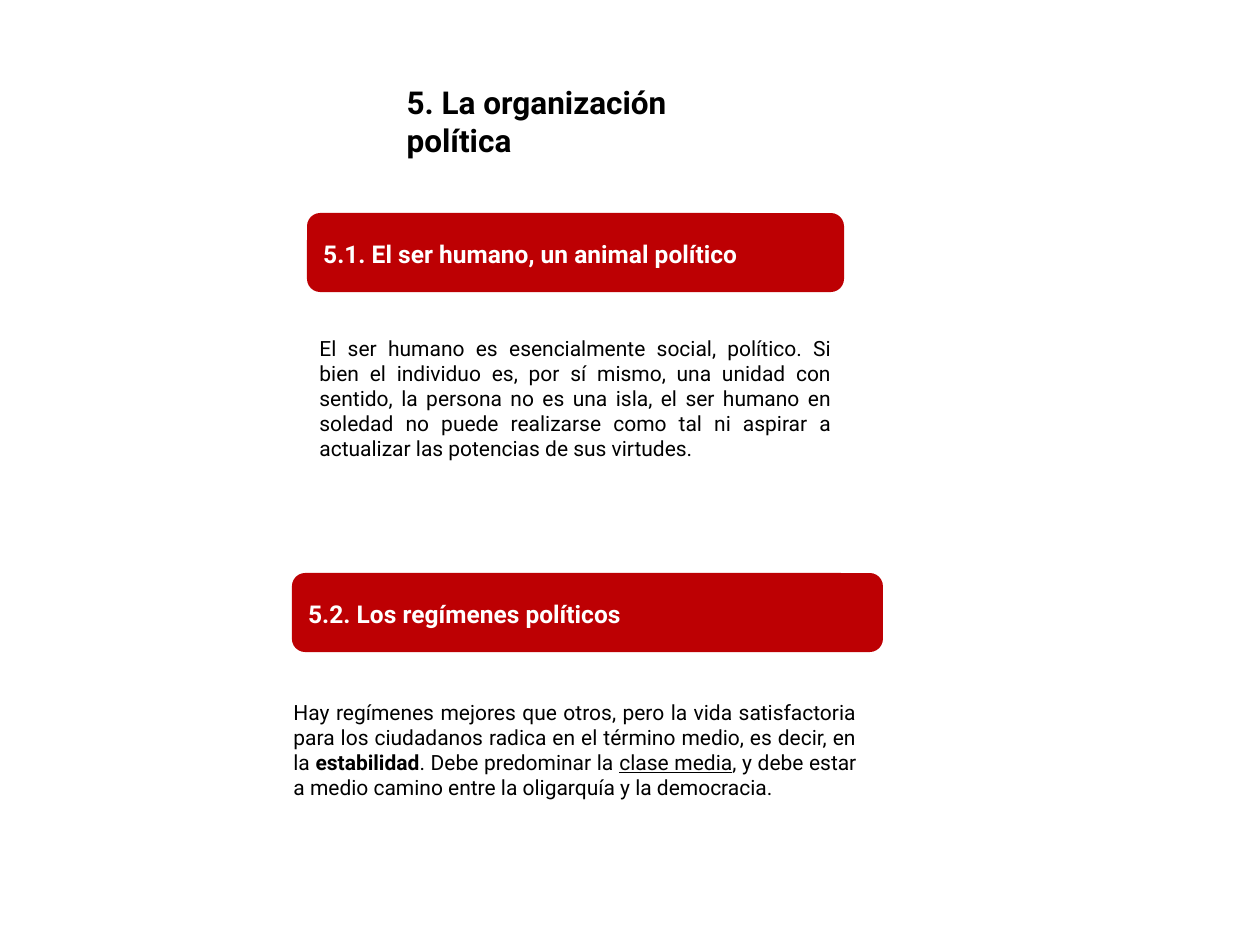
from dataclasses import dataclass

from pptx import Presentation
from pptx.dml.color import RGBColor
from pptx.enum.shapes import MSO_SHAPE
from pptx.enum.text import MSO_ANCHOR, MSO_AUTO_SIZE, PP_ALIGN
from pptx.util import Emu, Pt

ROUNDED = MSO_SHAPE.ROUNDED_RECTANGLE
TOP, MIDDLE = MSO_ANCHOR.TOP, MSO_ANCHOR.MIDDLE
LEFT, JUSTIFY = PP_ALIGN.LEFT, PP_ALIGN.JUSTIFY
NO_AUTOFIT = MSO_AUTO_SIZE.NONE

EMU_PER_PX = 914400 / 126
TITLE_ONLY_LAYOUT = 5


@dataclass(frozen=True)
class Theme:
    font: str = "Roboto"
    ink: RGBColor = RGBColor(0x00, 0x00, 0x00)
    banner: RGBColor = RGBColor(0xBD, 0x00, 0x03)
    banner_ink: RGBColor = RGBColor(0xFF, 0xFF, 0xFF)
    title_size: int = 18
    banner_size: int = 14
    body_size: int = 12


THEME = Theme()

# Each section: heading, its box, body runs (text, style), their box
SECTIONS = [
    (
        "5.1. El ser humano, un animal político",
        (307, 213, 537, 79),
        [("El ser humano es esencialmente social, político. Si bien el "
          "individuo es, por sí mismo, una unidad con sentido, la persona no "
          "es una isla, el ser humano en soledad no puede realizarse como tal "
          "ni aspirar a actualizar las potencias de sus virtudes.", "")],
        (307, 329, 537, 144),
    ),
    (
        "5.2. Los regímenes políticos",
        (292, 573, 591, 79),
        [("Hay regímenes mejores que otros, pero la vida satisfactoria para "
          "los ciudadanos radica en el término medio, es decir, en la ", ""),
         ("estabilidad", "bold"),
         (". Debe predominar la ", ""),
         ("clase media", "underline"),
         (", y debe estar a medio camino entre la oligarquía y la "
          "democracia.", "")],
        (281, 693, 588, 141),
    ),
]


def px(length):
    return Emu(round(length * EMU_PER_PX))


def format_run(run, size, color, bold=False, underline=False):
    font = run.font
    font.name, font.size = THEME.font, Pt(size)
    font.bold, font.underline = bold, underline
    font.color.rgb = color


def set_frame(frame, anchor):
    frame.word_wrap = True
    frame.auto_size = NO_AUTOFIT
    frame.vertical_anchor = anchor


def add_title(slide, text, box):
    title = slide.shapes.title
    title.left, title.top, title.width, title.height = map(px, box)
    title.text_frame.text = text
    set_frame(title.text_frame, TOP)
    paragraph = title.text_frame.paragraphs[0]
    paragraph.alignment = LEFT
    format_run(paragraph.runs[0], THEME.title_size, THEME.ink, bold=True)


def add_banner(slide, heading, box):
    banner = slide.shapes.add_shape(ROUNDED, *map(px, box))
    banner.shadow.inherit = False
    banner.fill.solid()
    banner.fill.fore_color.rgb = THEME.banner
    banner.line.fill.background()
    banner.text_frame.text = heading
    set_frame(banner.text_frame, MIDDLE)
    paragraph = banner.text_frame.paragraphs[0]
    paragraph.alignment = LEFT
    paragraph.line_spacing = 1.1
    format_run(paragraph.runs[0], THEME.banner_size, THEME.banner_ink, bold=True)


def add_body(slide, parts, box):
    body = slide.shapes.add_textbox(*map(px, box))
    set_frame(body.text_frame, TOP)
    paragraph = body.text_frame.paragraphs[0]
    paragraph.alignment = JUSTIFY
    for text, style in parts:
        run = paragraph.add_run()
        run.text = text
        format_run(run, THEME.body_size, THEME.ink,
                   bold=style == "bold", underline=style == "underline")


def main():
    deck = Presentation()
    deck.slide_width, deck.slide_height = px(1260), px(945)
    slide = deck.slides.add_slide(deck.slide_layouts[TITLE_ONLY_LAYOUT])

    # Slide title
    add_title(slide, "5. La organización política", (394, 77, 364, 50))

    # Sections, each a red banner over a paragraph
    for heading, banner_box, parts, body_box in SECTIONS:
        add_banner(slide, heading, banner_box)
        add_body(slide, parts, body_box)

    deck.save("out.pptx")


if __name__ == "__main__":
    main()
